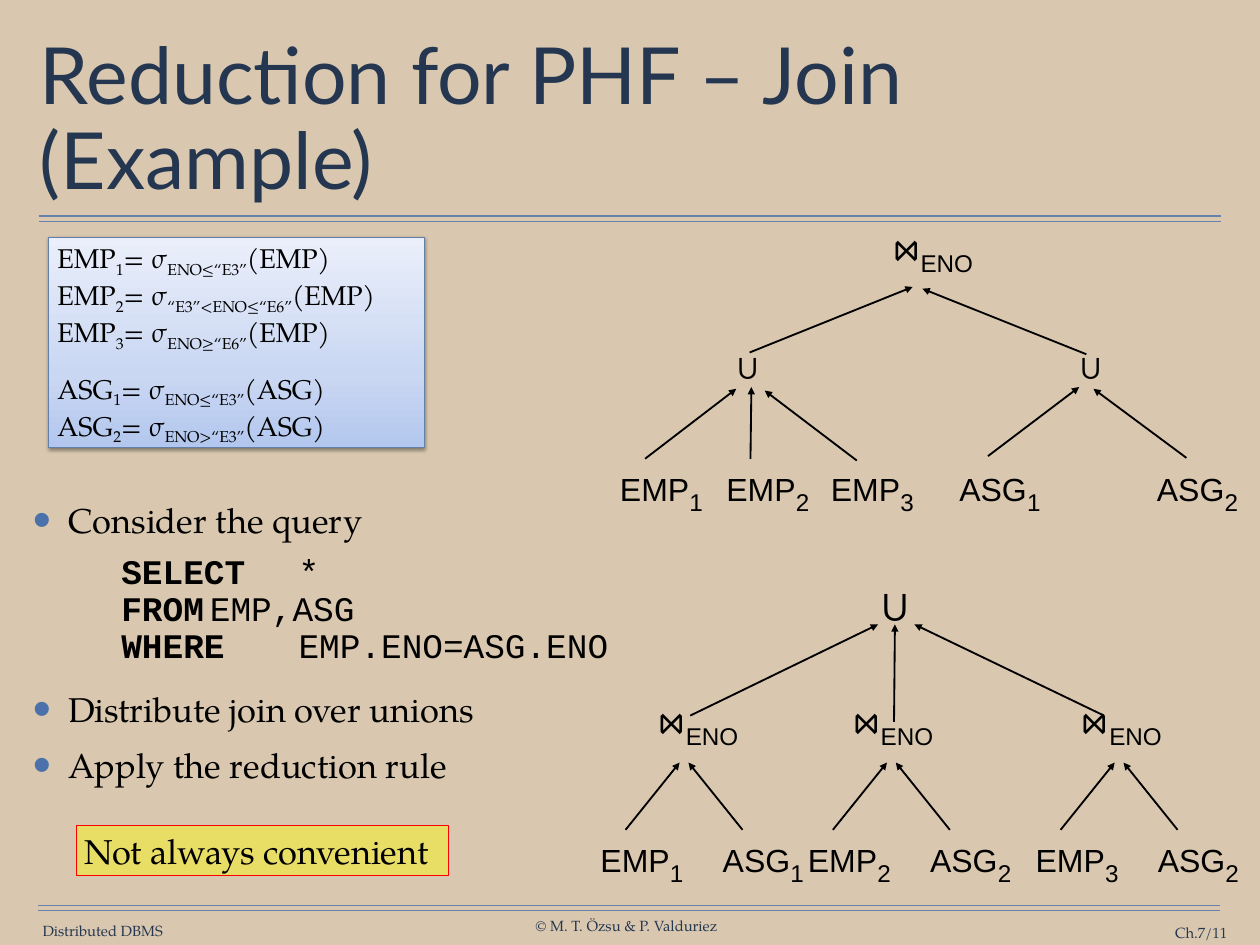
from copy import deepcopy

from lxml import etree
from pptx import Presentation
from pptx.dml.color import RGBColor
from pptx.enum.shapes import MSO_CONNECTOR as LINK, MSO_SHAPE as SHAPE
from pptx.enum.text import MSO_ANCHOR as ANCHOR, PP_ALIGN as ALIGN
from pptx.oxml import parse_xml
from pptx.oxml.ns import nsdecls, qn
from pptx.util import Inches, Pt

SAND = RGBColor(0xD9, 0xC8, 0xAF)
NAVY = RGBColor(0x25, 0x37, 0x50)
RULE = RGBColor(0x66, 0x82, 0xAA)
EDGE = RGBColor(0x62, 0x7F, 0xA8)
BLACK = RGBColor(0, 0, 0)
RED = RGBColor(0xFF, 0, 0)
YELLOW = RGBColor(0xFF, 0xFF, 0)
BLUES = [(0, RGBColor(0xB3, 0xC7, 0xEE)), (0.35, RGBColor(0xCA, 0xD7, 0xF2)),
         (1, RGBColor(0xEA, 0xEF, 0xFB))]
SERIF, SANS, MONO = "TeX Gyre Pagella", "Arial", "Courier New"
BULLET = ('<a:buClr {0}><a:srgbClr val="4A71A9"/></a:buClr>', '<a:buSzPct {0} val="150000"/>',
          '<a:buFont {0} typeface="Arial"/>', '<a:buChar {0} char="•"/>')


def write(frame, text, size=28, font=SERIF, color=BLACK, align=ALIGN.LEFT, line=None,
          before=0, after=0, bullet=False, tabs=(), bold=False, sub_size=None, sub_font=None):
    """Add a paragraph; text between ~ marks is subscript, or bold if bold is set."""
    par = frame.paragraphs[0]
    if par.runs:
        par = frame.add_paragraph()
        par.space_before = Pt(before)
    par.alignment, par.space_after = align, Pt(after)
    if line:
        par.line_spacing = line
    props = par._p.get_or_add_pPr()
    if bullet:
        props.set("marL", str(Inches(0.4)))
        props.set("indent", str(-Inches(0.4)))
        for part in BULLET:
            props.append(parse_xml(part.format(nsdecls("a"))))
    if tabs:
        stops = etree.SubElement(props, qn("a:tabLst"))
        for stop in tabs:
            etree.SubElement(stops, qn("a:tab"), pos=str(Inches(stop)), algn="l")
    for i, piece in enumerate(text.split("~")):
        marked = i % 2 == 1
        for j, words in enumerate(piece.split("\n")):
            if j:
                par.add_line_break()
            if not words:
                continue
            run = par.add_run()
            run.text = words
            run.font.size = Pt(marked and sub_size or size)
            run.font.name = marked and sub_font or font
            run.font.color.rgb = color
            if marked and bold:
                run.font.bold = True
            elif marked:
                run.font._element.set("baseline", "-25000")


def add_box(x, y, w, h, inset=0, wrap=False, anchor=ANCHOR.TOP):
    frame = slide.shapes.add_textbox(Inches(x), Inches(y), Inches(w), Inches(h)).text_frame
    frame.margin_left = frame.margin_right = Inches(inset)
    frame.margin_top = frame.margin_bottom = Inches(inset)
    frame.word_wrap, frame.vertical_anchor = wrap, anchor
    return frame


deck = Presentation()
deck.slide_width, deck.slide_height = Inches(14.22), Inches(10.67)
slide = deck.slides.add_slide(deck.slide_layouts[5])
slide.background.fill.solid()
slide.background.fill.fore_color.rgb = SAND

# Title and footer
title = slide.shapes.title
title.left, title.top = Inches(0.39), Inches(0.49)
title.width, title.height = Inches(13.44), Inches(1.76)
head = title.text_frame
head.margin_left = head.margin_right = head.margin_top = head.margin_bottom = Inches(0.06)
head.word_wrap, head.vertical_anchor = True, ANCHOR.MIDDLE
write(head, "Reduction for PHF – Join (Example)", size=64, font="Lato", color=NAVY, line=0.9)

for x, y, w, text, align in [
        (0.47, 10.41, 1.38, "Distributed DBMS", ALIGN.CENTER),
        (6.03, 10.35, 2.08, "© M. T. Özsu & P. Valduriez", ALIGN.CENTER),
        (12.31, 10.43, 1.54, "Ch.7/11", ALIGN.RIGHT)]:
    foot = add_box(x, y, w, 0.2, wrap=align == ALIGN.RIGHT, anchor=ANCHOR.MIDDLE)
    write(foot, text, size=12, color=NAVY, align=align)

# Query and steps
body = add_box(0.31, 5.57, 6.81, 4.02, inset=0.06, wrap=True)
write(body, "Consider the query", bullet=True)
write(body, "~\tSELECT\t~*\n\t~FROM\t~EMP,ASG\n\t~WHERE\t~EMP.ENO=ASG.ENO",
      font=MONO, bold=True, line=0.9, before=12, after=5.7, tabs=(1, 2, 3))
for step in ("Distribute join over unions", "Apply the reduction rule"):
    write(body, step, bullet=True, before=12)

# Tree labels and arrows
unions = [(8.29, 3.89, 28, 34.1), (12.16, 3.89, 28, 34.1), (9.93, 6.54, 36, 41.2)]
joins = [(9.91, 2.7), (7.26, 8.04), (9.46, 8.04), (12.04, 8.04)]
leaves = [(6.98, 5.19, "EMP~1"), (8.18, 5.19, "EMP~2"), (9.36, 5.19, "EMP~3"),
          (10.8, 5.19, "ASG~1"), (13.03, 5.19, "ASG~2")]
arrows = [(8.47, 5.18, 8.48, 4.37), (7.28, 5.18, 8.31, 4.39), (9.67, 5.2, 8.63, 4.41),
          (11.15, 5.15, 12.18, 4.37), (13.39, 5.17, 12.34, 4.39),
          (8.46, 3.98, 10.3, 3.24), (12.26, 4, 10.41, 3.26),
          (7.79, 8.08, 9.91, 7.05), (10.09, 8.15, 10.1, 7.05), (12.46, 8.08, 10.32, 7.05)]
for shift, emp, asg in [(0, 1, 1), (2.34, 2, 2), (4.91, 3, 2)]:
    leaves += [(6.76 + shift, 9.38, f"EMP~{emp}"), (8.13 + shift, 9.38, f"ASG~{asg}")]
    arrows += [(7.06 + shift, 9.37, 7.67 + shift, 8.61),
               (8.38 + shift, 9.37, 7.77 + shift, 8.61)]

for x, y, size, line in unions:
    write(add_box(x, y, 0.3, 0.48), "∪", size=size, font=SANS, align=ALIGN.CENTER, line=Pt(line))
for x, y in joins:
    write(add_box(x, y, 1.23, 0.47), "⋈~ENO", size=36, sub_size=34, sub_font=SANS,
          align=ALIGN.CENTER, line=Pt(31.3))
for x, y, text in leaves:
    write(add_box(x, y, 0.97, 0.44), text, size=26, font=SANS, sub_size=34, align=ALIGN.CENTER)

rules = [(x, y, x + 13.34, y) for x, y in
         [(0.44, 2.44), (0.44, 2.5), (0.43, 10.22), (0.43, 10.28)]]
for ends in rules + arrows:
    link = slide.shapes.add_connector(LINK.STRAIGHT, *map(Inches, ends))
    is_rule = ends in rules
    link.line.color.rgb = RULE if is_rule else BLACK
    link.line.width = Pt(1 if is_rule else 1.5)
    if not is_rule:
        etree.SubElement(link.line._get_or_add_ln(), qn("a:tailEnd"), type="triangle")
    etree.SubElement(link._element.spPr, qn("a:effectLst"))

# Fragment definitions
card = slide.shapes.add_shape(SHAPE.RECTANGLE, *map(Inches, (0.55, 2.68, 4.24, 2.37)))
card.fill.gradient()
card.fill.gradient_angle = 90
stops = card.fill._fill._gradFill.gsLst
stops.append(deepcopy(stops[-1]))
for stop, (place, color) in zip(card.fill.gradient_stops, BLUES):
    stop.position, stop.color.rgb = place, color
card.line.color.rgb, card.line.width = EDGE, Pt(0.75)
card.shadow.inherit = False
shade = etree.SubElement(card._element.spPr.find(qn("a:effectLst")), qn("a:outerShdw"),
                         blurRad=str(Pt(3.1)), dist=str(Pt(1.6)), dir="5400000", rotWithShape="0")
tint = etree.SubElement(shade, qn("a:srgbClr"), val="000000")
etree.SubElement(tint, qn("a:alpha"), val="38000")
card.text_frame.vertical_anchor = ANCHOR.TOP
write(card.text_frame, "EMP~1~= σ~ENO≤“E3”~(EMP)\nEMP~2~= σ~“E3”<ENO≤“E6”~(EMP)\n"
      "EMP~3~= σ~ENO≥“E6”~(EMP)", size=22)
write(card.text_frame, "ASG~1~= σ~ENO≤“E3”~(ASG)\nASG~2~= σ~ENO>“E3”~(ASG)",
      size=22, before=16)

# Remark
note = slide.shapes.add_shape(SHAPE.RECTANGLE, *map(Inches, (0.86, 9.32, 4.2, 0.57)))
note.fill.solid()
note.fill.fore_color.rgb = YELLOW
glaze = note._element.spPr.find(qn("a:solidFill"))[0]
etree.SubElement(glaze, qn("a:alpha"), val="41000")
note.line.color.rgb, note.line.width = RED, Pt(0.75)
note.shadow.inherit = False
note.text_frame.vertical_anchor = ANCHOR.TOP
write(note.text_frame, "Not always convenient")

deck.save("out.pptx")
